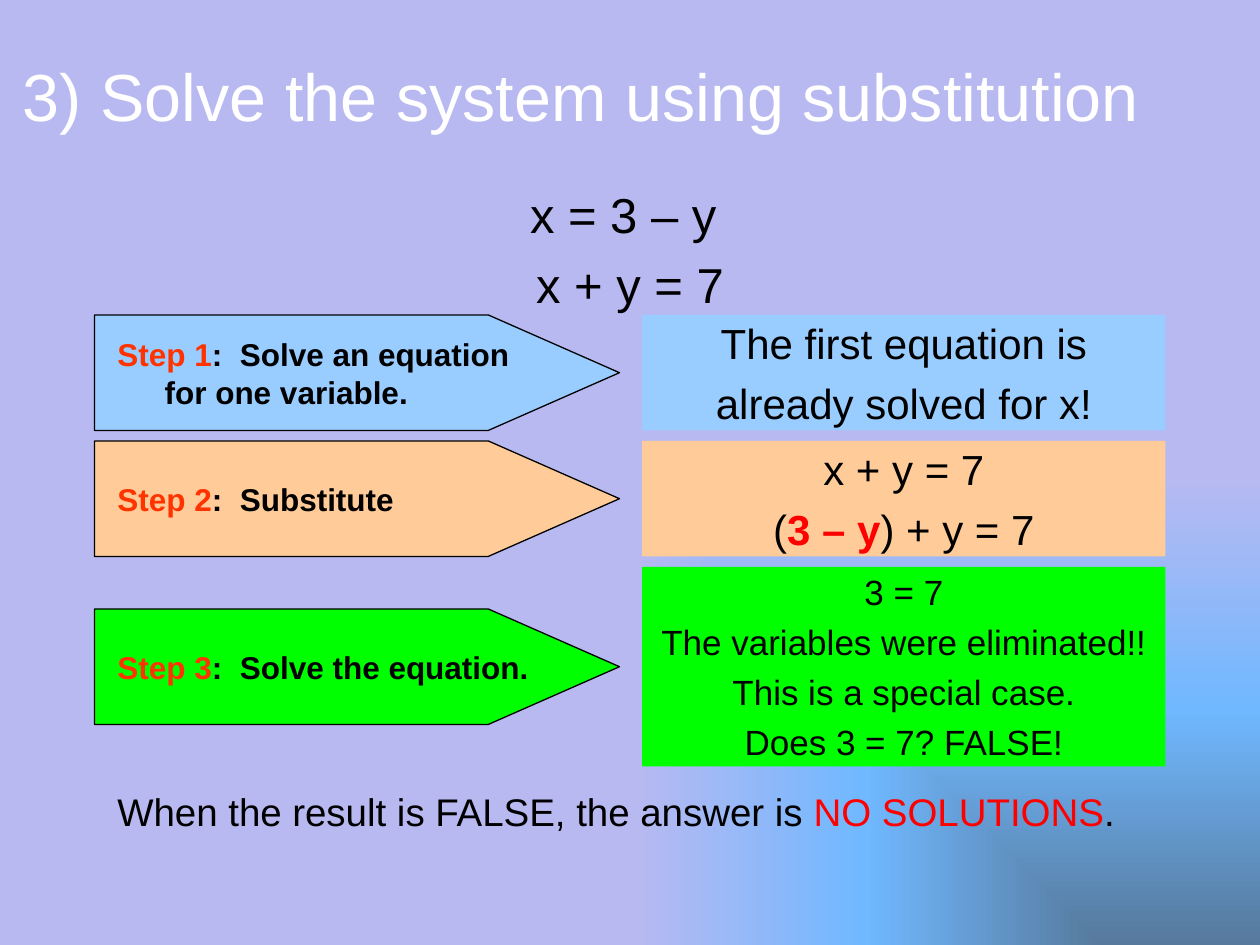
from dataclasses import dataclass

from pptx import Presentation
from pptx.dml.color import RGBColor
from pptx.enum.shapes import MSO_SHAPE
from pptx.enum.text import MSO_ANCHOR, MSO_AUTO_SIZE, PP_ALIGN
from pptx.oxml import parse_xml
from pptx.oxml.ns import nsdecls
from pptx.util import Pt

ARROW, RECT = MSO_SHAPE.PENTAGON, MSO_SHAPE.RECTANGLE
TOP, MIDDLE = MSO_ANCHOR.TOP, MSO_ANCHOR.MIDDLE
LEFT, CENTER = PP_ALIGN.LEFT, PP_ALIGN.CENTER
GROW = MSO_AUTO_SIZE.SHAPE_TO_FIT_TEXT


@dataclass(frozen=True)
class Theme:
    """Fonts, colours and type sizes of the slide."""
    font: str = "Arial"
    white: str = "FFFFFF"
    ink: str = "000000"
    step: str = "FF3300"
    accent: str = "FF0000"
    blue: str = "99CCFF"
    peach: str = "FFCC99"
    green: str = "00FF00"
    backdrop: tuple = ((0, "56799C"), (50, "70B8FF"), (100, "B9B9F1"))
    title: int = 38
    equation: int = 28
    work: int = 24
    note: int = 20
    label: int = 18
    conclusion: int = 22
    indent: int = 27
    spacing: float = 0.23


T = Theme()


def set_backdrop(s):
    """Fill the background with a gradient spreading from the lower right corner."""
    stops = "".join(
        f'<a:gs pos="{pos * 1000}"><a:srgbClr val="{color}"/></a:gs>'
        for pos, color in T.backdrop)
    s.element.cSld.insert(0, parse_xml(
        f'<p:bg {nsdecls("p", "a")}><p:bgPr><a:gradFill rotWithShape="0">'
        f'<a:gsLst>{stops}</a:gsLst><a:path path="rect">'
        '<a:fillToRect l="100000" t="100000"/></a:path></a:gradFill>'
        '<a:effectLst/></p:bgPr></p:bg>'))


def add_text(s, box, paragraphs, size, align=LEFT, anchor=MIDDLE,
             hanging=True, spaced=True, **frame):
    """Place paragraphs, each a list of (text, colour, bold) runs, in a box."""
    tf = s.shapes.add_textbox(*map(Pt, box)).text_frame
    for name, value in {"word_wrap": True, "vertical_anchor": anchor, **frame}.items():
        setattr(tf, name, value)
    for i, runs in enumerate(paragraphs):
        p = tf.paragraphs[0] if i == 0 else tf.add_paragraph()
        p.alignment = align
        if spaced:
            p.space_before = Pt(round(size * T.spacing, 1))
        if hanging:
            pPr = p._p.get_or_add_pPr()
            pPr.set("marL", str(Pt(T.indent)))
            pPr.set("indent", str(-Pt(T.indent)))
        for text, color, bold in runs:
            r = p.add_run()
            r.text = text
            for name, value in {"name": T.font, "size": Pt(size), "bold": bold}.items():
                setattr(r.font, name, value)
            r.font.color.rgb = RGBColor.from_string(color)


def plain(*lines, color=T.ink):
    """Turn each line into a paragraph of one regular run."""
    return [[(line, color, False)] for line in lines]


def add_panel(s, kind, box, fill):
    """Draw a flat filled shape without a line."""
    sp = s.shapes.add_shape(kind, *map(Pt, box))
    sp.shadow.inherit = False
    sp.fill.solid()
    sp.fill.fore_color.rgb = RGBColor.from_string(fill)
    sp.line.fill.background()
    return sp


def add_step(s, box, number, label, fill, spaced):
    """Draw an outlined arrow with its step label."""
    x, y, w, h = box
    sp = add_panel(s, ARROW, box, fill)
    sp.adjustments[0] = 1.136
    sp.line.color.rgb = RGBColor.from_string(T.ink)
    sp.line.width = Pt(0.75)
    runs = [(f"Step {number}", T.step, True), (f":  {label}", T.ink, True)]
    add_text(s, (x + 6, y + 6, w - 42, h - 12), [runs], T.label, spaced=spaced)


def add_work(s, box, paragraphs, size, fill, pad):
    """Draw a panel with the centred working of a step."""
    x, y, w, h = box
    dx, dy = pad
    add_panel(s, RECT, box, fill)
    add_text(s, (x + dx, y + dy, w - 2 * dx, h - 2 * dy), paragraphs, size, CENTER)


def add_steps(s, box):
    """Lay out the three steps, each arrow centred on its panel."""
    x, y, w, _ = box
    arrow_w, arrow_h, work_w, gap = 300, 66, 299, 6
    substituted = [("(", T.ink, False), ("3 – y", T.accent, True),
                   (") + y = 7", T.ink, False)]
    rows = (
        ("Solve an equation for one variable.", T.blue, 66, T.work, (5, 6),
         plain("The first equation is", "already solved for x!")),
        ("Substitute", T.peach, 66, T.work, (5, 6),
         plain("x + y = 7") + [substituted]),
        ("Solve the equation.", T.green, 114, T.note, (-1, 3),
         plain("3 = 7", "The variables were eliminated!!",
               "This is a special case.", "Does 3 = 7? FALSE!")),
    )
    for number, (label, fill, h, size, pad, work) in enumerate(rows, 1):
        arrow = (x, y + (h - arrow_h) / 2, arrow_w, arrow_h)
        add_step(s, arrow, number, label, fill, spaced=number == 1)
        add_work(s, (x + w - work_w, y, work_w, h), work, size, fill, pad)
        y += h + gap


def main():
    """Build the slide and save it."""
    prs = Presentation()
    prs.slide_width, prs.slide_height = Pt(720), Pt(540)
    s = prs.slides.add_slide(prs.slide_layouts[6])
    set_backdrop(s)
    add_text(s, (6, 18, 654, 72),
             plain("3) Solve the system using substitution", color=T.white),
             T.title, hanging=False, spaced=False)
    add_text(s, (48, 102, 624, 360), plain("x = 3 – y ", "x + y = 7"),
             T.equation, CENTER, TOP)
    add_steps(s, (54, 180, 612, 258))
    conclusion = [("When the result is FALSE, the answer is ", T.ink, False),
                  ("NO SOLUTIONS", T.accent, False), (".", T.ink, False)]
    add_text(s, (60, 446.5, 587, 34), [conclusion], T.conclusion, anchor=TOP,
             hanging=False, spaced=False, word_wrap=False, auto_size=GROW)
    prs.save("out.pptx")


if __name__ == "__main__":
    main()
